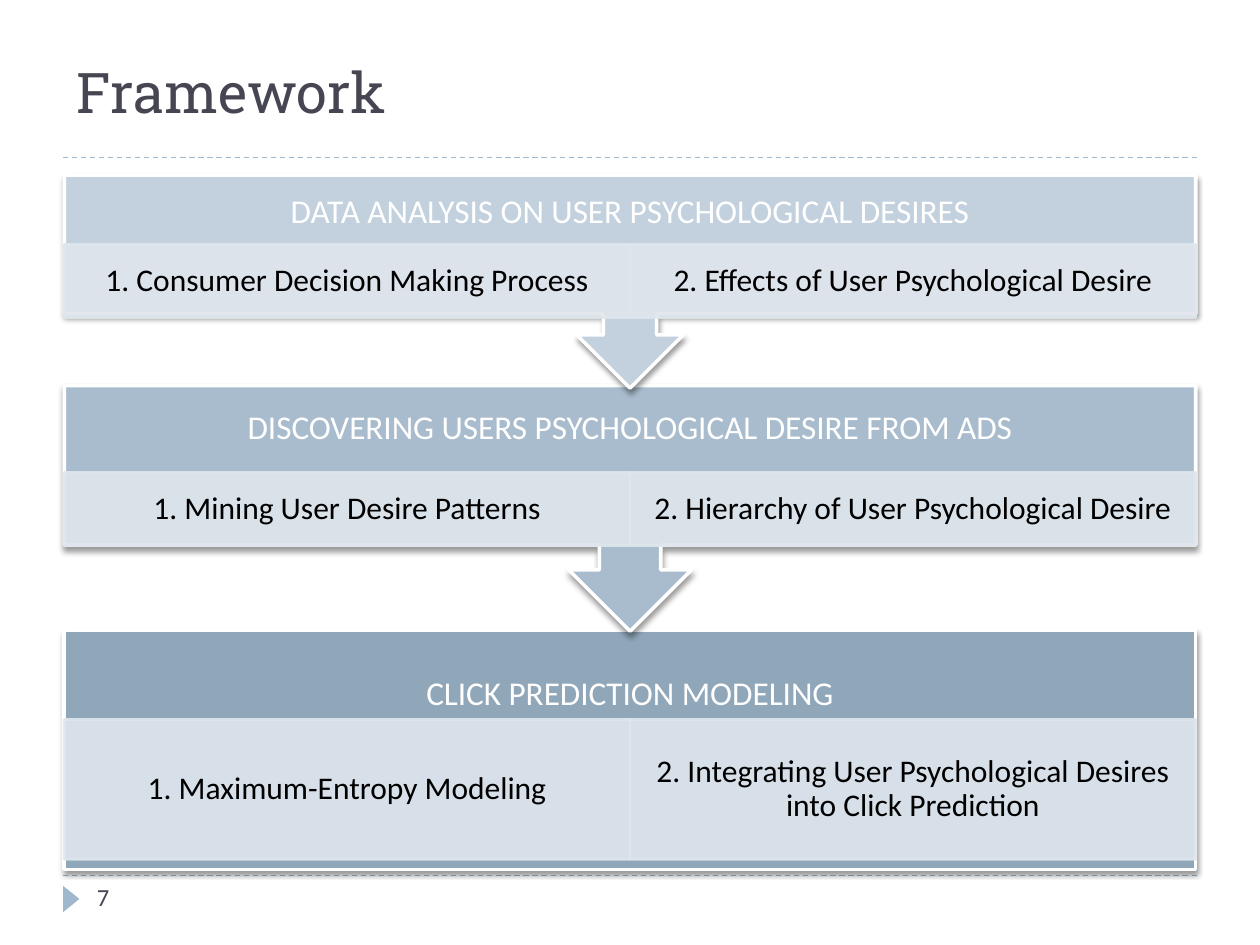
from lxml.etree import SubElement
from pptx import Presentation
from pptx.dml.color import RGBColor
from pptx.enum.dml import MSO_LINE
from pptx.enum.shapes import MSO_CONNECTOR, MSO_SHAPE
from pptx.enum.text import MSO_ANCHOR, PP_ALIGN
from pptx.oxml.ns import qn
from pptx.util import Emu, Pt

SCALE = 9144


def px(n):
    return Emu(n * SCALE)


def hue(code):
    return RGBColor.from_string(code)


def write(shape, text, size=18, font="Calibri", color="000000", align=PP_ALIGN.CENTER,
          anchor=MSO_ANCHOR.MIDDLE, inset=(10, 5), gap=0.9):
    frame = shape.text_frame
    frame.word_wrap = True
    frame.vertical_anchor = anchor
    frame.margin_left = frame.margin_right = px(inset[0])
    frame.margin_top = frame.margin_bottom = px(inset[1])
    para = frame.paragraphs[0]
    para.alignment = align
    para.line_spacing = gap
    run = para.add_run()
    run.text = text
    run.font.size = Pt(size)
    run.font.name = font
    run.font.color.rgb = hue(color)


def fade(part, percent):
    for tint in part.iter(qn("a:srgbClr")):
        SubElement(tint, qn("a:alpha"), val=str(percent * 1000))


class Deck:
    dark = "464653"
    accent = "9FB8CD"
    pale = "DFE6ED"
    white = "FFFFFF"

    def __init__(self, wide, high):
        self.file = Presentation()
        self.file.slide_width, self.file.slide_height = px(wide), px(high)
        self.slide = self.file.slides.add_slide(self.file.slide_layouts[6])

    def shape(self, kind, box, fill, line=None, width=2, turn=0):
        item = self.slide.shapes.add_shape(kind, *map(px, box))
        item.shadow.inherit = False
        item.rotation = turn
        item.fill.solid()
        item.fill.fore_color.rgb = hue(fill)
        if line:
            item.line.color.rgb = hue(line)
            item.line.width = Pt(width)
        else:
            item.line.fill.background()
        return item

    def rule(self, left, right, y):
        line = self.slide.shapes.add_connector(
            MSO_CONNECTOR.STRAIGHT, px(left), px(y), px(right), px(y))
        line.line.color.rgb = hue(self.accent)
        line.line.width = Pt(0.75)
        line.line.dash_style = MSO_LINE.DASH
        SubElement(line._element.spPr, qn("a:effectLst"))

    def text(self, box, words, **style):
        write(self.slide.shapes.add_textbox(*map(px, box)), words, **style)

    def panel(self, kind, box, fill, turn):
        item = self.shape(kind, box, fill, self.white, turn=turn)
        glow = SubElement(item._element.spPr.find(qn("a:effectLst")), qn("a:outerShdw"),
                          blurRad=str(Pt(3)), dist=str(Pt(2)), dir="5400000", rotWithShape="0")
        SubElement(glow, qn("a:srgbClr"), val="000000")
        fade(glow, 40)

    def cell(self, box, words):
        item = self.shape(MSO_SHAPE.RECTANGLE, box, self.pale, self.pale, 1.5)
        fade(item._element.spPr, 90)
        write(item, words, inset=(14, 3))

    def stage(self, kind, turn, top, high, head, row, deep, fill, title, steps):
        left, half = 51, 449
        self.panel(kind, (left, top, 2 * half, high), fill, turn)
        self.text((left, top, 2 * half, head), title, size=19, color=self.white, inset=(15, 15))
        for i, step in enumerate(steps):
            self.cell((left + i * half, row, half, deep), f"{i + 1}. {step}")


def main():
    deck = Deck(1000, 750)
    for y in (695, 125):
        deck.rule(50, 950, y)
    deck.shape(MSO_SHAPE.ISOSCELES_TRIANGLE, (46, 707, 21, 13), deck.accent, turn=90)
    deck.text((51, 30, 929, 85), "Framework", size=32, font="Roboto Slab",
              color=deck.dark, align=PP_ALIGN.LEFT, gap=1.0)

    block, arrow = (MSO_SHAPE.RECTANGLE, 0), (MSO_SHAPE.UP_ARROW_CALLOUT, 180)
    stages = [
        (*block, 500, 190, 103, 571, 111, "90A7BA", "CLICK PREDICTION MODELING",
         ("Maximum-Entropy Modeling",
          "Integrating User Psychological Desires into Click Prediction")),
        (*arrow, 306, 195, 69, 375, 58, "A9BCCD",
         "DISCOVERING USERS PSYCHOLOGICAL DESIRE FROM ADS",
         ("Mining User Desire Patterns", "Hierarchy of User Psychological Desire")),
        (*arrow, 139, 169, 59, 194, 58, "C3D1DE",
         "DATA ANALYSIS ON USER PSYCHOLOGICAL DESIRES",
         ("Consumer Decision Making Process", "Effects of User Psychological Desire")),
    ]
    for stage in stages:
        deck.stage(*stage)

    deck.text((67, 695, 217, 40), "7", size=14, color=deck.dark,
              align=PP_ALIGN.LEFT, anchor=MSO_ANCHOR.TOP, gap=1.0)
    deck.file.save("out.pptx")


if __name__ == "__main__":
    main()
